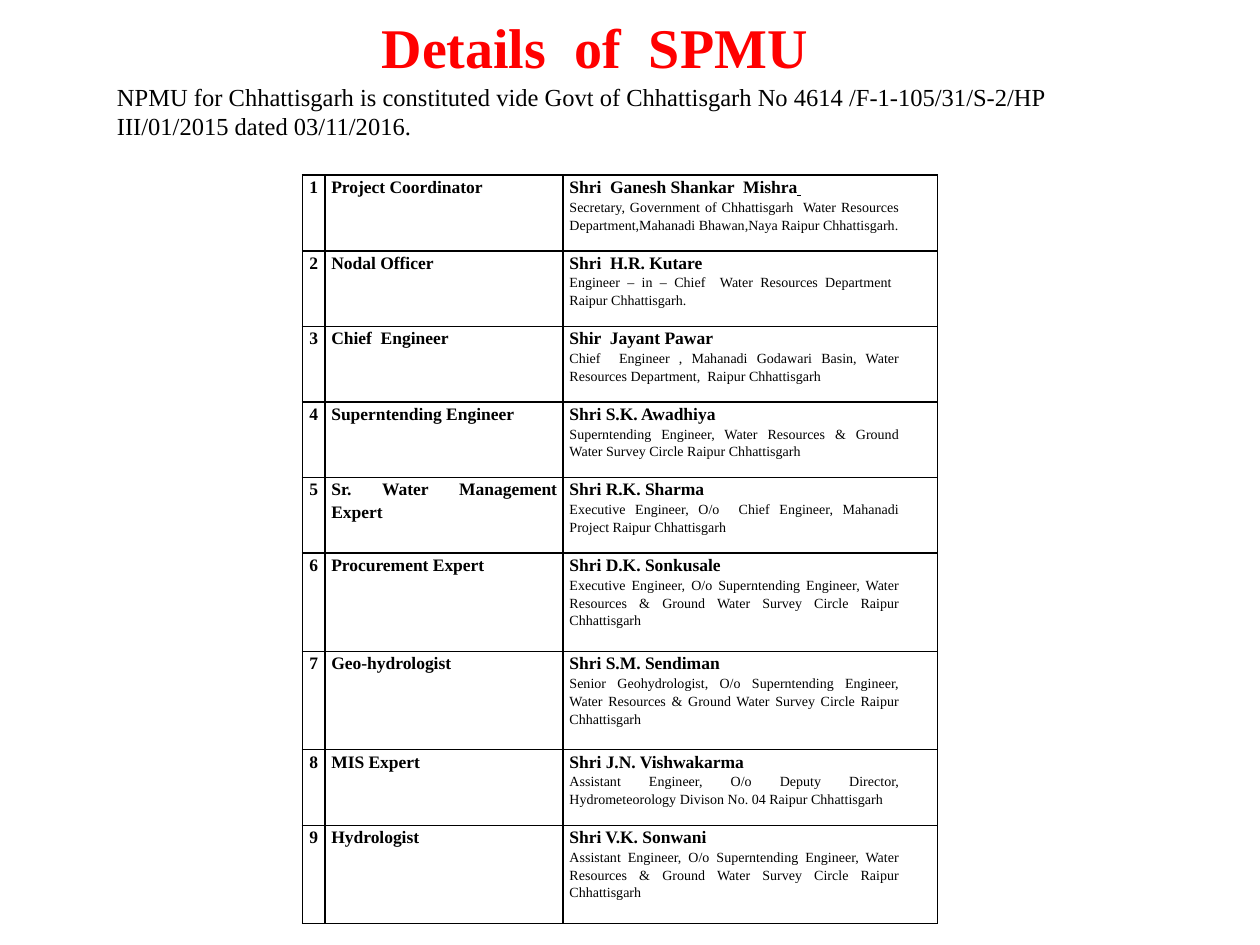
from lxml import etree
from pptx import Presentation
from pptx import util as u
from pptx.dml.color import RGBColor
from pptx.enum import text
from pptx.oxml import ns

RED = RGBColor(0xFF, 0, 0)
BLACK = RGBColor(0, 0, 0)
ENGLISH_FONT = "Times New Roman"
CENTER, JUSTIFY = text.PP_ALIGN.CENTER, text.PP_ALIGN.JUSTIFY
HEAD = {"size": u.Pt(10), "bold": True}
DETAIL = {"size": u.Pt(8), "bold": False}
SHORT, TALL = 0.6, 0.78
COLUMNS = [0.18, 1.89, 2.97]
CIRCLE = "Superntending Engineer, Water Resources & Ground Water Survey Circle Raipur Chhattisgarh"
MEMBERS = [
    ("Project Coordinator", "Shri  Ganesh Shankar  Mishra",
     "Secretary, Government of Chhattisgarh  Water Resources "
     "Department,Mahanadi Bhawan,Naya Raipur Chhattisgarh.", SHORT),
    ("Nodal Officer", "Shri  H.R. Kutare",
     "Engineer – in – Chief  Water Resources Department  Raipur Chhattisgarh. ", SHORT),
    ("Chief  Engineer", "Shir  Jayant Pawar",
     "Chief  Engineer , Mahanadi Godawari Basin, Water Resources Department,  "
     "Raipur Chhattisgarh", SHORT),
    ("Superntending Engineer", "Shri S.K. Awadhiya", CIRCLE, SHORT),
    ("Sr. Water Management Expert", "Shri R.K. Sharma",
     "Executive Engineer, O/o  Chief Engineer, Mahanadi Project Raipur Chhattisgarh", SHORT),
    ("Procurement Expert", "Shri D.K. Sonkusale", f"Executive Engineer, O/o {CIRCLE}", TALL),
    ("Geo-hydrologist", "Shri S.M. Sendiman", f"Senior Geohydrologist, O/o {CIRCLE}", TALL),
    ("MIS Expert", "Shri J.N. Vishwakarma",
     "Assistant Engineer, O/o Deputy Director, Hydrometeorology Divison No. 04 "
     "Raipur Chhattisgarh", SHORT),
    ("Hydrologist", "Shri V.K. Sonwani", f"Assistant Engineer, O/o {CIRCLE}", TALL),
]


class SlideWriter:
    """Holds the text style and the current slide, and adds elements to it."""

    def __init__(self, slide, font=ENGLISH_FONT, color=BLACK):
        self.s, self.font, self.color = slide, font, color

    def run(self, p, words, **fmt):
        r = p.add_run()
        r.text = words
        color = fmt.pop("color", self.color)
        for name, value in {"name": self.font, **fmt}.items():
            setattr(r.font, name, value)
        r.font.color.rgb = color

    def text_box(self, x, y, w, h, words, **fmt):
        tf = self.s.shapes.add_textbox(*map(u.Inches, (x, y, w, h))).text_frame
        tf.word_wrap = True
        self.run(tf.paragraphs[0], words, **fmt)

    def border(self, cell, width=u.Pt(1)):
        tcPr = cell._tc.get_or_add_tcPr()
        for side in ("lnL", "lnR", "lnT", "lnB"):
            ln = etree.SubElement(tcPr, ns.qn(f"a:{side}"), w=str(width))
            fill = etree.SubElement(ln, ns.qn("a:solidFill"))
            etree.SubElement(fill, ns.qn("a:srgbClr"), val=str(self.color))

    def cell(self, cell, paragraphs, align, right=0.05):
        margins = {"left": 0.05, "right": right, "top": 0, "bottom": 0}
        for side, value in margins.items():
            setattr(cell, f"margin_{side}", u.Inches(value))
        self.border(cell)
        cell.fill.background()
        tf = cell.text_frame
        for i, runs in enumerate(paragraphs):
            p = tf.add_paragraph() if i else tf.paragraphs[0]
            p.alignment, p.line_spacing = align, 1.15
            for words, fmt in runs:
                self.run(p, words, **fmt)

    def member_table(self, x, y, columns, members):
        height = sum(m[-1] for m in members)
        sp = self.s.shapes.add_table(len(members), len(columns),
                                     *map(u.Inches, (x, y, sum(columns), height)))
        table = sp.table
        table.first_row = table.horz_banding = False
        for column, width in zip(table.columns, columns):
            column.width = u.Inches(width)
        for i, (role, name, detail, row_height) in enumerate(members):
            row = table.rows[i]
            row.height = u.Inches(row_height)
            number_cell, role_cell, person_cell = row.cells
            person = [(name, HEAD)]
            if i == 0:
                person.append((" ", {**HEAD, "underline": True}))
            self.cell(number_cell, [[(str(i + 1), HEAD)]], CENTER)
            self.cell(role_cell, [[(role, HEAD)]], JUSTIFY)
            self.cell(person_cell, [person, [(detail, DETAIL)]], JUSTIFY, right=0.3)


def main():
    prs = Presentation()
    prs.slide_width, prs.slide_height = u.Inches(10), u.Inches(7.5)
    writer = SlideWriter(prs.slides.add_slide(prs.slide_layouts[6]))
    writer.text_box(2.93, 0.05, 3.88, 0.64, "Details  of  SPMU",
                    size=u.Pt(32), bold=True, color=RED)
    writer.member_table(2.4, 1.39, COLUMNS, MEMBERS)
    writer.text_box(0.83, 0.6, 8.43, 0.57,
                    "NPMU for Chhattisgarh is constituted vide Govt of Chhattisgarh "
                    "No 4614 /F-1-105/31/S-2/HP III/01/2015 dated 03/11/2016.", size=u.Pt(14))
    prs.save("out.pptx")


if __name__ == "__main__":
    main()
